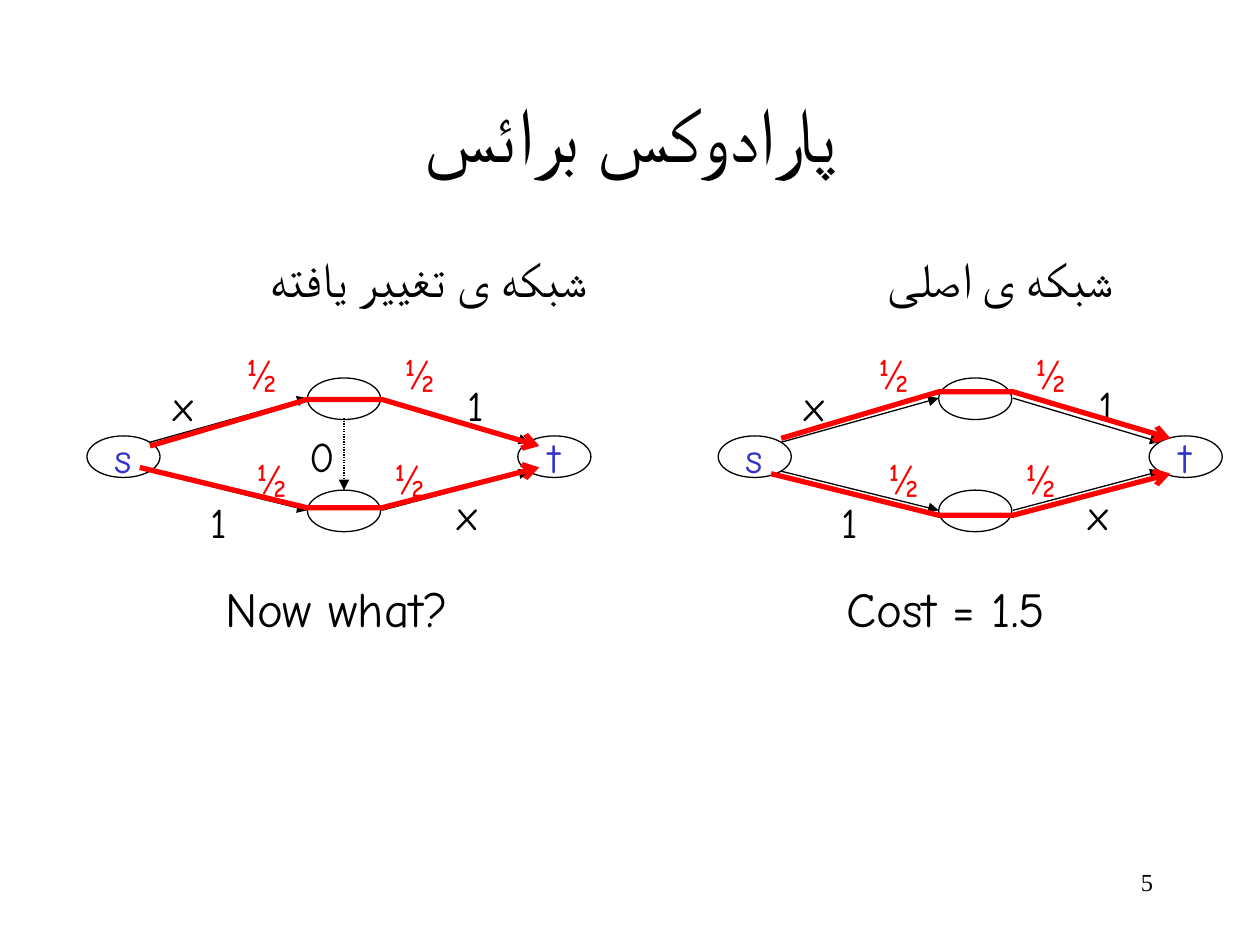
from pptx import Presentation
from pptx.dml.color import RGBColor
from pptx.enum import dml, shapes, text
from pptx.oxml.ns import qn
from pptx.util import Inches, Pt
from lxml import etree

FONT, SERIF = "Comic Neue", "Times New Roman"
BLACK, WHITE, RED, BLUE = "000000", "FFFFFF", "FF0000", "3333CC"
LEFT, RIGHT, CENTER = text.PP_ALIGN.LEFT, text.PP_ALIGN.RIGHT, text.PP_ALIGN.CENTER
NODE_W, NODE_H = 0.58, 0.33


def paint(fmt, color):
    """Colour a fill, or a font's fill, from a hex string."""
    fmt.solid()
    fmt.fore_color.rgb = RGBColor.from_string(color)


def write(shape, words, size=24, color=BLACK, font=FONT, align=LEFT,
          anchor=text.MSO_ANCHOR.TOP, wrap=False, fit=text.MSO_AUTO_SIZE.NONE):
    frame = shape.text_frame
    frame.word_wrap, frame.auto_size = wrap, fit
    frame.vertical_anchor = anchor
    para = frame.paragraphs[0]
    para.alignment = align
    run = para.add_run()
    run.text = words
    run.font.size, run.font.name = Pt(size), font
    paint(run.font.fill, color)
    etree.SubElement(run.font._element, qn("a:cs"), typeface=SERIF)
    return para


def place(shape, x, y, w, h):
    shape.left, shape.top = Inches(x), Inches(y)
    shape.width, shape.height = Inches(w), Inches(h)


def label(parts, words, x, y, w, h=0.5, **form):
    box = parts.add_textbox(Inches(x), Inches(y), Inches(w), Inches(h))
    form.setdefault("fit", text.MSO_AUTO_SIZE.SHAPE_TO_FIT_TEXT)
    write(box, words, **form)


def node(parts, x, y, words=""):
    oval = parts.add_shape(shapes.MSO_SHAPE.OVAL, Inches(x), Inches(y),
                           Inches(NODE_W), Inches(NODE_H))
    oval.shadow.inherit = False
    paint(oval.fill, WHITE)
    paint(oval.line.fill, BLACK)
    oval.line.width = Pt(0.75)
    if words:
        write(oval, words, color=BLUE, align=CENTER, anchor=text.MSO_ANCHOR.MIDDLE)


def stroke(shape, color, width, head):
    paint(shape.line.fill, color)
    shape.line.width = Pt(width)
    etree.SubElement(shape.line._get_or_add_ln(), qn("a:tailEnd"), type=head)


def edge(parts, x1, y1, x2, y2, dash=None):
    line = parts.add_connector(shapes.MSO_CONNECTOR.STRAIGHT,
                               Inches(x1), Inches(y1), Inches(x2), Inches(y2))
    if dash:
        line.line.dash_style = dash
    stroke(line, BLACK, 0.75, "triangle")
    etree.SubElement(line._element.spPr, qn("a:effectLst"))


def flow(parts, *points):
    start, *rest = [(Inches(x), Inches(y)) for x, y in points]
    pen = parts.build_freeform(*start)
    pen.add_line_segments(rest, close=False)
    route = pen.convert_to_shape()
    route.shadow.inherit = False
    route.fill.background()
    stroke(route, RED, 3, "arrow")


def network(parts, x, y, upper, lower):
    """Four-node network at x, y; upper and lower are the (end, middle)
    heights of the red routes below y."""
    # Nodes
    for dx, dy, name in [(0, 0.75, "s"), (3.42, 0.75, "t"),
                         (1.75, 0.29, ""), (1.75, 1.18, "")]:
        node(parts, x + dx, y + dy, name)
    # Edge costs
    for words, dx, dy in [("x", 0.59, 0.25), ("1", 2.92, 0.25),
                          ("x", 2.84, 1.12), ("1", 0.88, 1.18)]:
        label(parts, words, x + dx, y + dy, 0.4 if words == "x" else 0.35)
    # Flow on each edge
    for dx, dy in [(1.17, 0), (2.42, 0), (1.25, 0.83), (2.34, 0.83)]:
        label(parts, "½", x + dx, y + dy, 0.42, color=RED)
    # Edges
    for end, mid in [(0.8, 0.45), (1.03, 1.34)]:
        edge(parts, x + 0.5, y + end, x + 1.75, y + mid)
        edge(parts, x + 2.34, y + mid, x + 3.51, y + end)
    # Red routes
    for dx, (end, mid) in [(0.5, upper), (0.42, lower)]:
        flow(parts, (x + dx, y + end), (x + 1.75, y + mid),
             (x + 2.34, y + mid), (x + 3.59, y + end))


def name_net(body, words, x, y, w, h):
    """Right-to-left heading of one network, without a bullet."""
    place(body, x, y, w, h)
    para = write(body, words, size=28, align=RIGHT, wrap=True)
    form = para._p.get_or_add_pPr()
    for key, value in [("marL", Inches(0.32)), ("indent", 0), ("rtl", 1)]:
        form.set(key, str(value))
    etree.SubElement(form, qn("a:buNone"))


def headings(slide):
    title, left, right = slide.placeholders
    place(title, 0.75, 0.42, 8.5, 1.25)
    write(title, "پارادوکس برائس", size=44, align=CENTER, wrap=True,
          anchor=text.MSO_ANCHOR.MIDDLE)
    name_net(right, "شبکه ی اصلی", 5.08, 1.92, 4.17, 4.5)
    name_net(left, "شبکه ی تغییر یافته", 0.75, 1.92, 4.33, 4.5)


def changed(slide, x, y):
    parts = slide.shapes
    network(parts, x, y, (0.83, 0.46), (1, 1.32))
    # Free middle edge
    edge(parts, x + 2.04, y + 0.61, x + 2.04, y + 1.18,
         dash=dml.MSO_LINE.ROUND_DOT)
    label(parts, "0", x + 1.67, y + 0.66, 0.4)
    label(parts, "Now what?", x + 1, y + 1.83, 2.18, 0.57, size=28)


def first(slide, x, y):
    network(slide.shapes.add_group_shape().shapes, x, y, (0.77, 0.4), (1.05, 1.38))
    label(slide.shapes, "Cost = 1.5", x + 0.92, y + 1.83, 1.96, 0.57, size=28)


def main():
    deck = Presentation()
    deck.slide_width, deck.slide_height = Inches(10), Inches(7.5)
    slide = deck.slides.add_slide(deck.slide_layouts[3])
    headings(slide)
    first(slide, 5.7, 2.71)
    changed(slide, 0.69, 2.71)
    # Page number
    label(slide.shapes, "5", 7.17, 6.83, 2.08, size=14, font=SERIF,
          align=RIGHT, wrap=True, fit=text.MSO_AUTO_SIZE.NONE)
    deck.save("out.pptx")


if __name__ == "__main__":
    main()
